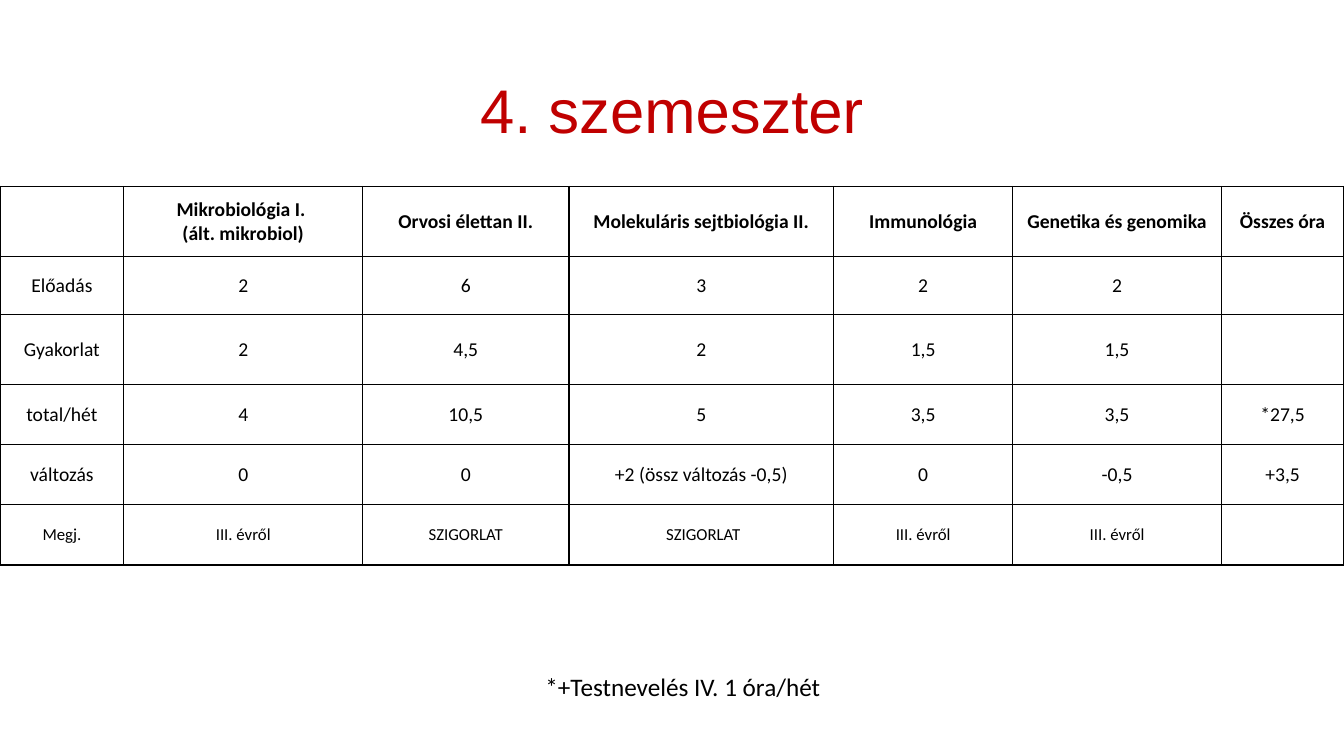
import pptx
import pptx.util
import pptx.dml.color
import pptx.enum.text
import pptx.oxml
import pptx.oxml.ns
from dataclasses import dataclass

Pt = pptx.util.Pt
RGB = pptx.dml.color.RGBColor
CENTER = pptx.enum.text.PP_ALIGN.CENTER
MIDDLE = pptx.enum.text.MSO_ANCHOR.MIDDLE
TOP = pptx.enum.text.MSO_ANCHOR.TOP


@dataclass(frozen=True)
class Theme:
    red: str = "C00000"
    black: str = "000000"
    head: str = "Arial"
    body: str = "Calibri"
    title: int = 44
    note: int = 18
    cell: int = 14
    small: int = 12
    rule: int = 1


THEME = Theme()

# Table content and sizes
COLS = [88.5, 170.5, 147.5, 189, 128, 149, 87.5]
ROWS = [50, 41.5, 50, 43, 43, 43]
DATA = [
    ["", "Mikrobiológia I. \n(ált. mikrobiol)", "Orvosi élettan II.",
     "Molekuláris sejtbiológia II.", "Immunológia",
     "Genetika és genomika", "Összes óra"],
    ["Előadás", "2", "6", "3", "2", "2", ""],
    ["Gyakorlat", "2", "4,5", "2", "1,5", "1,5", ""],
    ["total/hét", "4", "10,5", "5", "3,5", "3,5", "*27,5"],
    ["változás", "0", "0", "+2 (össz változás -0,5)", "0", "-0,5", "+3,5"],
    ["Megj.", "III. évről", "SZIGORLAT", " SZIGORLAT", "III. évről",
     "III. évről", ""],
]


def apply(item, form):
    for name, value in form.items():
        setattr(item, name, value)


def write(frame, text, font, color, para=None):
    """Fill a text frame with centred lines."""
    frame.text = text
    for line in frame.paragraphs:
        apply(line, {"alignment": CENTER, **(para or {})})
        for run in line.runs:
            apply(run.font, font)
            run.font.color.rgb = RGB.from_string(color)


def add_label(slide, box, text, font, color, anchor, para=None):
    frame = slide.shapes.add_textbox(*map(Pt, box)).text_frame
    apply(frame, {"word_wrap": True, "vertical_anchor": anchor})
    write(frame, text, font, color, para)


def add_rules(cell):
    """Draw all four borders; they must come before the fill."""
    props = cell._tc.get_or_add_tcPr()
    for index, side in enumerate(("lnL", "lnR", "lnT", "lnB")):
        props.insert(index, pptx.oxml.parse_xml(
            f'<a:{side} {pptx.oxml.ns.nsdecls("a")} w="{Pt(THEME.rule)}">'
            f'<a:solidFill><a:srgbClr val="{THEME.black}"/></a:solidFill>'
            f'</a:{side}>'))


def add_grid(slide, left, top):
    table = slide.shapes.add_table(
        len(ROWS), len(COLS), Pt(left), Pt(top),
        Pt(sum(COLS)), Pt(sum(ROWS))).table
    apply(table, {"first_row": False, "horz_banding": False})
    for col, width in zip(table.columns, COLS):
        col.width = Pt(width)
    form = {"margin_left": Pt(5), "margin_right": Pt(5), "margin_top": 0,
            "margin_bottom": 0, "vertical_anchor": MIDDLE}
    last = len(ROWS) - 1
    for r, (row, height) in enumerate(zip(table.rows, ROWS)):
        row.height = Pt(height)
        size = THEME.small if r == last else THEME.cell
        font = {"name": THEME.body, "size": Pt(size), "bold": r == 0}
        for cell, text in zip(row.cells, DATA[r]):
            apply(cell, form)
            cell.fill.background()
            add_rules(cell)
            write(cell.text_frame, text, font, THEME.black)


def main():
    deck = pptx.Presentation()
    apply(deck, {"slide_width": Pt(960), "slide_height": Pt(540)})
    slide = deck.slides.add_slide(deck.slide_layouts[6])

    # Title
    add_label(slide, (66, 28.75, 828, 104.4), "4. szemeszter",
              {"name": THEME.head, "size": Pt(THEME.title)}, THEME.red,
              MIDDLE, {"line_spacing": 0.9})

    # Weekly hours
    add_grid(slide, 0, 133.2)

    # Footnote
    add_label(slide, (375.8, 476, 224, 29), "*+Testnevelés IV. 1 óra/hét",
              {"name": THEME.body, "size": Pt(THEME.note)}, THEME.black, TOP)

    deck.save("out.pptx")


if __name__ == "__main__":
    main()
